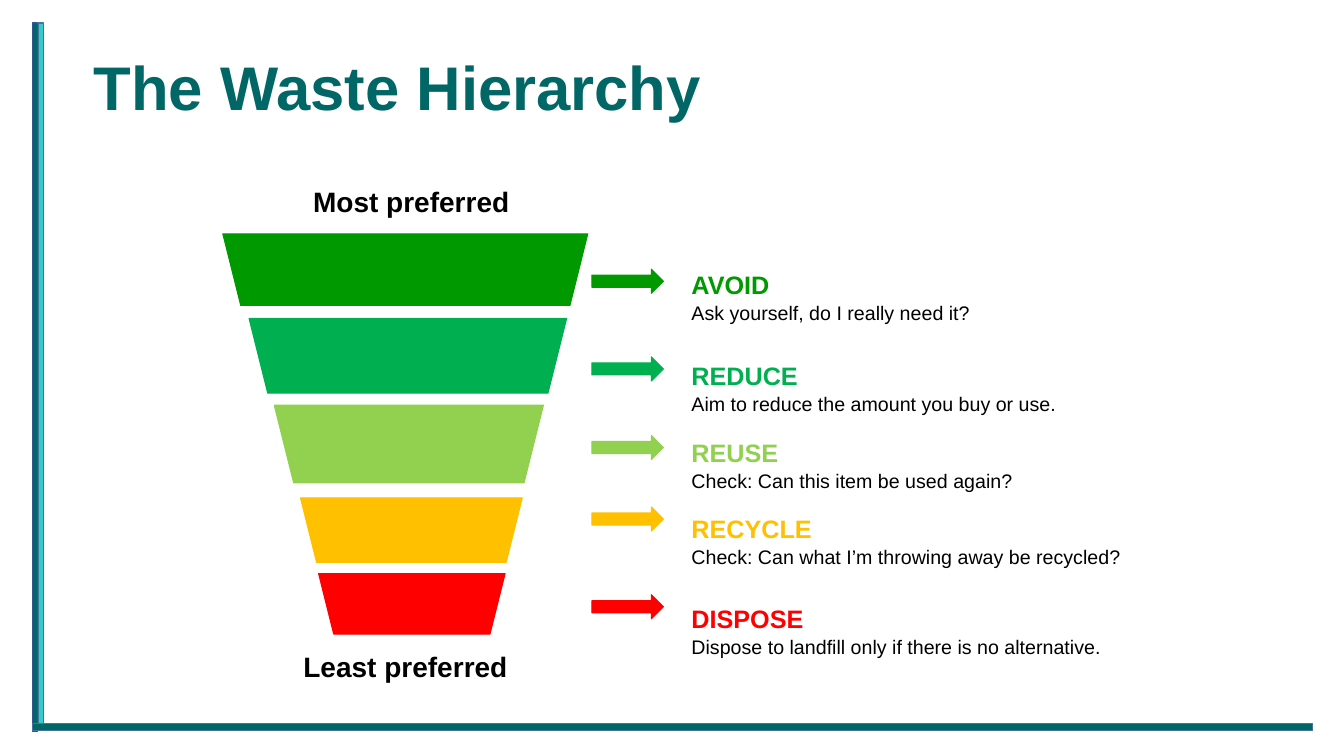
"""Build the waste hierarchy slide."""
from pptx import Presentation
from pptx import util as u
from pptx.dml.color import RGBColor
from pptx.enum import shapes, text

SCALE = 9144
FONT = "Arial"
COLOURS = {
    "teal": "006666", "cyan": "33CCCC", "navy": "325491", "blue": "43739E",
    "black": "000000", "avoid": "009900", "reduce": "00B050",
    "reuse": "92D050", "recycle": "FFC000", "dispose": "FF0000",
}
TITLE = ("The Waste Hierarchy", (83, 17, 1150, 145))
BARS = [
    ((32, 23, 5, 703), "teal", "navy"),
    ((38, 23, 5, 702), "cyan", "blue"),
    ((32, 718, 1270, 7), "teal", "blue"),
]
CAPTIONS = [
    ("Most preferred", (266, 182, 284, 40), "CENTER", 0.9),
    ("Least preferred", (291, 639, 228, 44), "LEFT", 1.0),
]
LEVELS = [
    ("avoid", "Ask yourself, do I really need it?", (221, 232, 362, 71), 267, 0),
    ("reduce", "Aim to reduce the amount you buy or use.", (247, 316, 315, 74), 354, 25.5),
    ("reuse", "Check: Can this item be used again?", (272, 402, 267, 77), 432, 16),
    ("recycle", "Check: Can what I’m throwing away be recycled?", (298, 494, 220, 64), 503, 15),
    ("dispose", "Dispose to landfill only if there is no alternative.", (316, 569, 185, 60), 590, 24.5),
]
ARROW_LEFT, ARROW_WIDTH, ARROW_HEIGHT = 587, 71, 24
ADVICE_BOX = (676, 262, 470, 390)


def emu(box):
    return [length * SCALE for length in box]


def rgb(name):
    return RGBColor.from_string(COLOURS[name])


def add_block(slide, kind, box, fill, line, weight, rotation=0):
    block = slide.shapes.add_shape(getattr(shapes.MSO_SHAPE, kind), *emu(box))
    block.rotation = rotation
    block.shadow.inherit = False
    block.fill.solid()
    block.fill.fore_color.rgb = rgb(fill)
    block.line.color.rgb = rgb(line)
    block.line.width = u.Pt(weight)


def add_frame(slide, box):
    frame = slide.shapes.add_textbox(*emu(box)).text_frame
    frame.word_wrap = True
    return frame


def write(paragraph, words, size, colour, bold, **layout):
    paragraph.text = words
    for key, value in layout.items():
        setattr(paragraph, key, value)
    style = {"name": FONT, "size": u.Pt(size), "bold": bold}
    for key, value in style.items():
        setattr(paragraph.runs[0].font, key, value)
    paragraph.runs[0].font.color.rgb = rgb(colour)


def main():
    deck = Presentation()
    deck.slide_width, deck.slide_height = emu((1333, 750))
    slide = deck.slides.add_slide(deck.slide_layouts[5])

    for box, fill, line in BARS:
        add_block(slide, "RECTANGLE", box, fill, line, 1)

    title = slide.shapes.title
    words, box = TITLE
    for side, length in zip(("left", "top", "width", "height"), emu(box)):
        setattr(title, side, length)
    title.text_frame.vertical_anchor = text.MSO_ANCHOR.MIDDLE
    write(title.text_frame.paragraphs[0], words, 44, "teal", True,
          alignment=text.PP_ALIGN.LEFT, line_spacing=0.9)

    for words, box, align, spacing in CAPTIONS:
        write(add_frame(slide, box).paragraphs[0], words, 20, "black", True,
              alignment=getattr(text.PP_ALIGN, align), line_spacing=spacing)

    advice = add_frame(slide, ADVICE_BOX)
    for level, tip, box, arrow_top, gap in LEVELS:
        add_block(slide, "TRAPEZOID", box, level, level, 0.75, 180)
        arrow = (ARROW_LEFT, arrow_top, ARROW_WIDTH, ARROW_HEIGHT)
        add_block(slide, "RIGHT_ARROW", arrow, level, level, 0.75)
        first = level == LEVELS[0][0]
        heading = advice.paragraphs[0] if first else advice.add_paragraph()
        spacing = {} if first else {"space_before": u.Pt(gap)}
        write(heading, level.upper(), 18, level, True, **spacing)
        write(advice.add_paragraph(), tip, 14, "black", False, space_before=u.Pt(1))

    deck.save("out.pptx")


if __name__ == "__main__":
    main()
